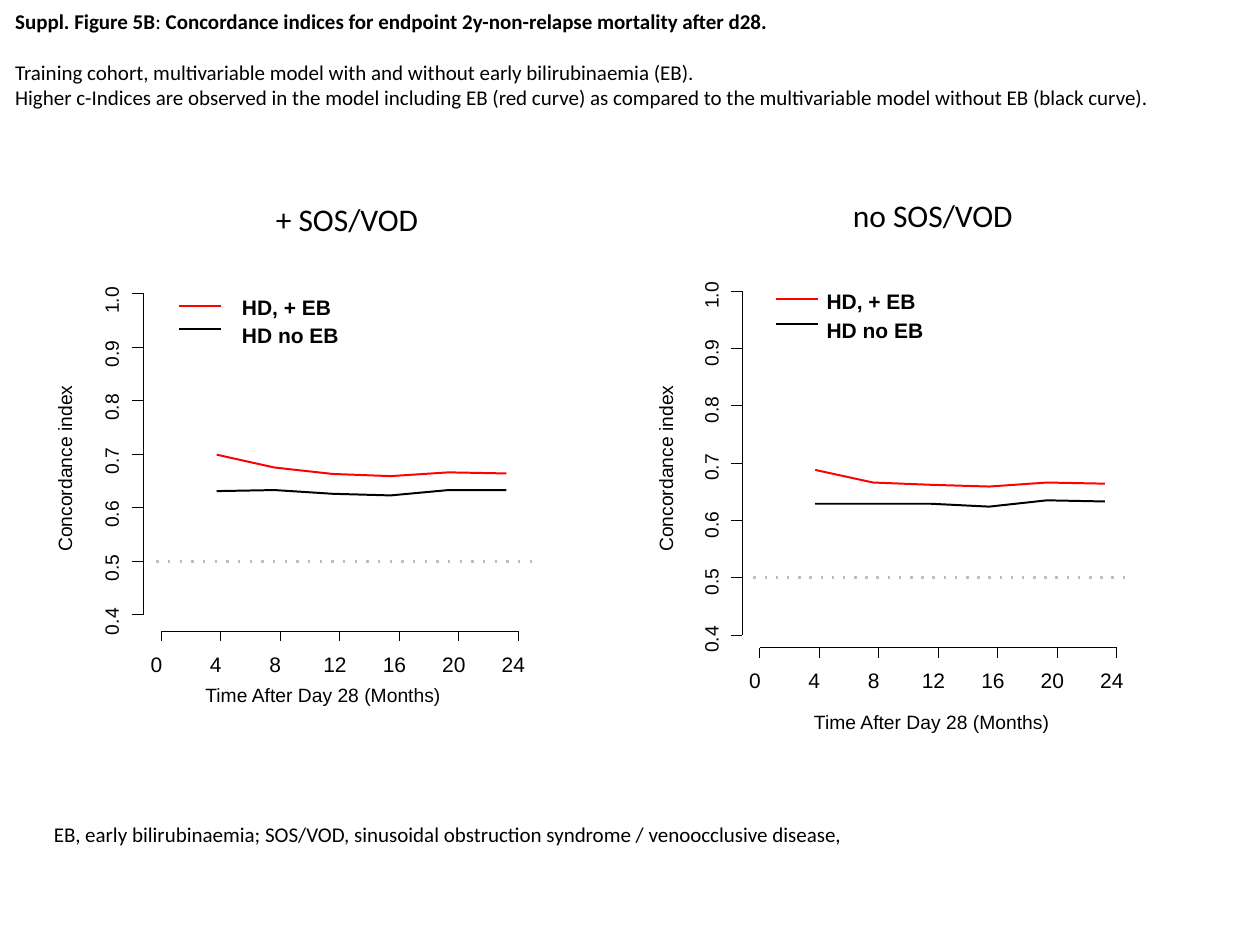
from dataclasses import dataclass

from lxml import etree
from pptx import Presentation
from pptx.dml.color import RGBColor
from pptx.enum.text import MSO_ANCHOR, MSO_AUTO_SIZE, PP_ALIGN
from pptx.oxml.ns import qn
from pptx.util import Inches, Pt

TOP = MSO_ANCHOR.TOP
LEFT = PP_ALIGN.LEFT
FIT_SHAPE = MSO_AUTO_SIZE.SHAPE_TO_FIT_TEXT
NO_FIT = MSO_AUTO_SIZE.NONE
TITLE_ONLY = 5


class Theme:
    BLACK = RGBColor(0, 0, 0)
    RED = RGBColor(0xFF, 0, 0)
    GREY = RGBColor(0xBE, 0xBE, 0xBE)
    BODY_FONT = "Calibri"
    PLOT_FONT = "Arial"
    HEADING, BODY, TICK, AXIS = 18, 12, 12, 11
    X_AXIS, Y_AXIS, CURVE, DASH = 0.63, 0.5, 1.13, 1.63


@dataclass
class Panel:
    heading: str
    heading_box: tuple
    x0: float             # month 0 on the time axis
    x_axis_y: float
    x_title: tuple
    y_axis_x: float
    y_top: float          # index 1.0
    y_step: float         # height of 0.1
    y_label_size: tuple
    y_title_x: float
    y_title_size: tuple
    legend_x: float
    legend_lines: tuple
    legend_text_x: float
    legend_texts: tuple
    dash_x: float
    dash_step: float
    dash_count: int
    with_eb: tuple        # concordance index in percent
    without_eb: tuple

    def index_y(self, percent):
        return self.y_top + (100 - percent) / 10 * self.y_step


PANELS = [
    Panel("+ SOS/VOD", (2.09, 1.54, 1.35, 0.4),
          1.28, 5.01, (1.63, 5.42), 1.14, 2.33, 0.425,
          (0.32, 0.22), 0.53, (1.55, 0.22),
          1.42, (2.43, 2.61), 1.92, (2.34, 2.56), 1.24, 0.0926, 33,
          (69.9, 67.5, 66.3, 65.9, 66.6, 66.4),
          (63.1, 63.3, 62.6, 62.3, 63.3, 63.3)),
    Panel("no SOS/VOD", (6.67, 1.51, 1.49, 0.4),
          6.03, 5.14, (6.46, 5.64), 5.89, 2.31, 0.455,
          (0.28, 0.2), 5.29, (1.41, 0.2),
          6.16, (2.37, 2.57), 6.56, (2.29, 2.52), 5.98, 0.0888, 34,
          (68.8, 66.6, 66.2, 65.9, 66.6, 66.4),
          (62.9, 62.9, 62.9, 62.4, 63.5, 63.3)),
]
MONTH_STEP = 0.472        # width of four months
POINT_OFFSET, POINT_STEP = 0.44, 0.46
LEGEND_SIZES = (("HD, + EB", 0.72), ("HD no EB", 0.78))


def format_runs(p, size, font, bold=None):
    for r in p.runs:
        r.font.size = Pt(size)
        r.font.name = font
        r.font.color.rgb = Theme.BLACK
        r.font.bold = bold


def add_text(shapes, text, box, size, font, wrap=False, bold=None):
    sp = shapes.add_textbox(*map(Inches, box))
    tf = sp.text_frame
    tf.text = text
    tf.word_wrap = wrap
    tf.auto_size = FIT_SHAPE
    format_runs(tf.paragraphs[0], size, font, bold)
    return sp


def add_label(shapes, text, box, size, bold=None, rotation=0):
    sp = add_text(shapes, text, box, size, Theme.PLOT_FONT, bold=bold)
    tf = sp.text_frame
    tf.margin_left = tf.margin_right = tf.margin_top = tf.margin_bottom = 0
    sp.rotation = rotation


def add_vertical_label(shapes, text, center, size):
    (x, y), (w, h) = center, size
    add_label(shapes, text, (x - w / 2, y - h / 2, w, h), Theme.AXIS, rotation=270)


def add_line(shapes, start, end, color, width):
    line = shapes.add_connector(1, *map(Inches, start + end))
    line.line.color.rgb = color
    line.line.width = Pt(width)
    etree.SubElement(line._element.spPr, qn("a:effectLst"))


def add_strokes(shapes, strokes, color, width):
    """Draw one outline made of several open strokes."""
    strokes = [[(Inches(x), Inches(y)) for x, y in s] for s in strokes]
    builder = shapes.build_freeform(*strokes[0][0])
    for i, (first, *rest) in enumerate(strokes):
        if i:
            builder.move_to(*first)
        builder.add_line_segments(rest, close=False)
    sp = builder.convert_to_shape()
    sp.fill.background()
    sp.line.color.rgb = color
    sp.line.width = Pt(width)
    sp.shadow.inherit = False


def add_x_axis(shapes, panel):
    y = panel.x_axis_y
    add_line(shapes, (panel.x0, y), (panel.x0 + 6 * MONTH_STEP, y),
             Theme.BLACK, Theme.X_AXIS)
    for i in range(7):
        x = panel.x0 + i * MONTH_STEP
        month = str(4 * i)
        w = 0.17 if len(month) == 1 else 0.26
        add_line(shapes, (x, y), (x, y + 0.08), Theme.BLACK, Theme.X_AXIS)
        add_label(shapes, month, (x - w / 2, y + 0.16, w, 0.22), Theme.TICK)
    add_label(shapes, "Time After Day 28 (Months)", panel.x_title + (1.89, 0.19),
              Theme.AXIS)


def add_y_axis(shapes, panel):
    x = panel.y_axis_x
    add_line(shapes, (x, panel.index_y(40)), (x, panel.y_top),
             Theme.BLACK, Theme.Y_AXIS)
    for percent in range(40, 101, 10):
        y = panel.index_y(percent)
        add_line(shapes, (x, y), (x - 0.09, y), Theme.BLACK, Theme.Y_AXIS)
        add_vertical_label(shapes, f"{percent / 100:.1f}", (x - 0.24, y),
                           panel.y_label_size)
    add_vertical_label(shapes, "Concordance index",
                       (panel.y_title_x, panel.index_y(70)), panel.y_title_size)


def add_curves(shapes, panel):
    for values, color in ((panel.with_eb, Theme.RED), (panel.without_eb, Theme.BLACK)):
        points = [(panel.x0 + POINT_OFFSET + i * POINT_STEP, panel.index_y(v))
                  for i, v in enumerate(values)]
        add_strokes(shapes, [points], color, Theme.CURVE)
    # Reference level at 0.5
    y = panel.index_y(50)
    starts = [panel.dash_x + i * panel.dash_step for i in range(panel.dash_count)]
    add_strokes(shapes, [[(x, y), (x + 0.02, y)] for x in starts],
                Theme.GREY, Theme.DASH)


def add_legend(shapes, panel):
    rows = zip(LEGEND_SIZES, panel.legend_lines, panel.legend_texts,
               (Theme.RED, Theme.BLACK))
    for (text, w), line_y, text_y, color in rows:
        x = panel.legend_x
        add_line(shapes, (x, line_y), (x + 0.33, line_y), color, Theme.CURVE)
        add_label(shapes, text, (panel.legend_text_x, text_y, w, 0.2),
                  Theme.TICK, bold=True)


def add_panel(slide, panel):
    shapes = slide.shapes.add_group_shape().shapes
    add_x_axis(shapes, panel)
    add_y_axis(shapes, panel)
    add_curves(shapes, panel)
    add_legend(shapes, panel)
    add_text(slide.shapes, panel.heading, panel.heading_box,
             Theme.HEADING, Theme.BODY_FONT)


def set_caption(title):
    title.left, title.top, title.width, title.height = map(
        Inches, (0.02, 0.02, 9.57, 1.31))
    tf = title.text_frame
    tf.text = (
        "Suppl. Figure 5B\n"
        "Training cohort, multivariable model with and without early bilirubinaemia (EB).\n"
        "Higher c-Indices are observed in the model including EB (red curve) "
        "as compared to the multivariable model without EB (black curve).")
    tf.vertical_anchor = TOP
    tf.word_wrap = True
    tf.auto_size = NO_FIT
    head = tf.paragraphs[0]
    for text in (": ", "Concordance indices for endpoint "
                 "2y-non-relapse mortality after d28."):
        head.add_run().text = text
    for p in tf.paragraphs:
        p.alignment = LEFT
        format_runs(p, Theme.BODY, Theme.BODY_FONT, bold=p.text == head.text)
    head.runs[1].font.bold = False
    head.space_after = Pt(14.65)


def main():
    prs = Presentation()
    prs.slide_width, prs.slide_height = Inches(10), Inches(7.5)
    slide = prs.slides.add_slide(prs.slide_layouts[TITLE_ONLY])
    set_caption(slide.shapes.title)
    for panel in PANELS:
        add_panel(slide, panel)
    # Abbreviations
    add_text(slide.shapes,
             "EB, early bilirubinaemia; SOS/VOD, sinusoidal obstruction syndrome / "
             "venoocclusive disease,",
             (0.33, 6.47, 9.33, 0.3), Theme.BODY, Theme.BODY_FONT, wrap=True)
    prs.save("out.pptx")


if __name__ == "__main__":
    main()
